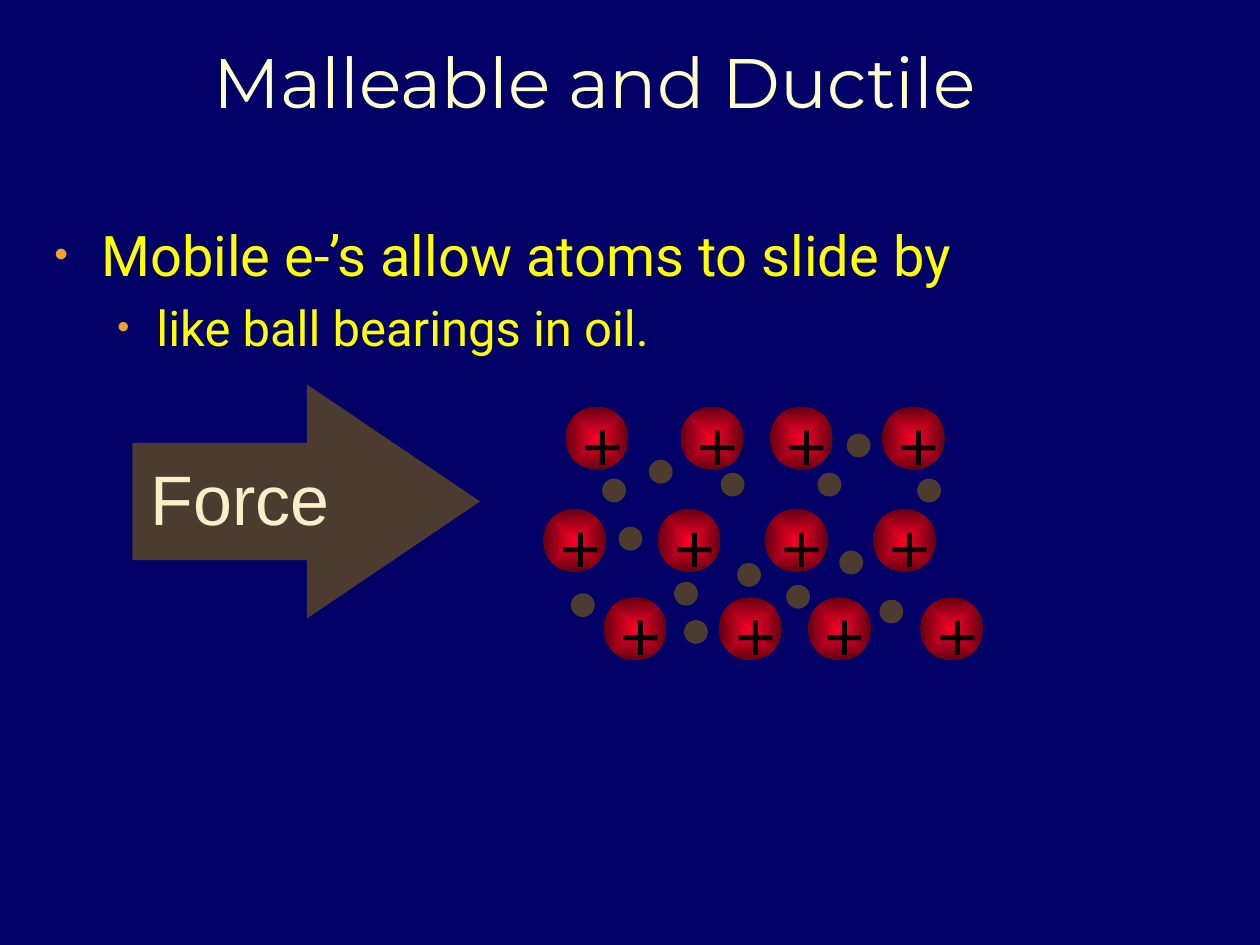
from lxml import etree
from pptx import Presentation
from pptx.dml.color import RGBColor
from pptx.enum.shapes import MSO_SHAPE
from pptx.enum.text import MSO_ANCHOR, MSO_AUTO_SIZE, PP_ALIGN
from pptx.oxml import parse_xml
from pptx.oxml.ns import nsdecls, qn
from pptx.util import Cm, Pt

OVAL, ARROW = MSO_SHAPE.OVAL, MSO_SHAPE.RIGHT_ARROW
TOP, BOTTOM = MSO_ANCHOR.TOP, MSO_ANCHOR.BOTTOM

NAVY = RGBColor(0x00, 0x00, 0x66)
CREAM = RGBColor(0xFF, 0xFF, 0xCC)
YELLOW = RGBColor(0xFF, 0xFF, 0x00)
ORANGE = RGBColor(0xF0, 0xA2, 0x2E)
RED = RGBColor(0xFC, 0x01, 0x28)
DARK_RED = RGBColor(0x65, 0x00, 0x10)
BROWN = RGBColor(0x4E, 0x3B, 0x30)
SAND = RGBColor(0xFB, 0xEE, 0xC9)
BLACK = RGBColor(0x00, 0x00, 0x00)

TITLE = "Malleable and Ductile"
# text, level, size (pt), left margin (cm), hanging indent (cm), space before (pt)
BULLETS = [
    ("Mobile e-’s allow atoms to slide by", 0, 32, 0.95, 0.95, 0),
    ("like ball bearings in oil.", 1, 28, 2.06, 0.79, 5.6),
]

# Positions in cm: the bottom row of ions repeats the top row, shifted right
TOP_ROW = [11.4, 13.72, 15.52, 17.78]
ION_ROWS = [
    (8.2, TOP_ROW),
    (10.26, [10.95, 13.26, 15.42, 17.6]),
    (12.04, [x + 0.77 for x in TOP_ROW]),
]
ELECTRONS = [
    (16.48, 9.53), (13.08, 9.27), (11.51, 11.96), (12.47, 10.62),
    (14.53, 9.53), (13.79, 12.5), (17.73, 12.09), (14.86, 11.35),
    (15.85, 11.79), (16.92, 11.1), (18.49, 9.65), (17.07, 8.74),
    (12.14, 9.65), (13.59, 11.73),
]
ION_SIZE, ELECTRON_SIZE = 1.27, 0.48


def place(sp, x, y, w, h):
    sp.left, sp.top, sp.width, sp.height = Cm(x), Cm(y), Cm(w), Cm(h)


def add_run(p, text, size, font, color):
    r = p.add_run()
    r.text = text
    r.font.size = Pt(size)
    r.font.name = font
    r.font.color.rgb = color


def add_bullet(p, left, hanging):
    pPr = p._p.get_or_add_pPr()
    pPr.set("marL", str(Cm(left)))
    pPr.set("indent", str(-Cm(hanging)))
    color = etree.SubElement(pPr, qn("a:buClr"))
    etree.SubElement(color, qn("a:srgbClr")).set("val", str(ORANGE))
    etree.SubElement(pPr, qn("a:buSzPct")).set("val", "70000")
    etree.SubElement(pPr, qn("a:buFont")).set("typeface", "Arial")
    etree.SubElement(pPr, qn("a:buChar")).set("char", "•")


def add_plain_shape(shapes, kind, x, y, w, h):
    sp = shapes.add_shape(kind, Cm(x), Cm(y), Cm(w), Cm(h))
    sp.shadow.inherit = False
    sp.line.fill.background()
    sp.fill.solid()
    sp.fill.fore_color.rgb = BROWN
    return sp


def add_label(shapes, text, x, y, w, h, color):
    tf = shapes.add_textbox(Cm(x), Cm(y), Cm(w), Cm(h)).text_frame
    tf.word_wrap = True
    tf.vertical_anchor = BOTTOM
    add_run(tf.paragraphs[0], text, 40, "Arial", color)


def fill_radial(sp, inner, outer):
    sp.fill.gradient()
    for stop, color in zip(sp.fill.gradient_stops, (inner, outer)):
        stop.color.rgb = color
    lin = sp._element.spPr.find(qn("a:gradFill")).find(qn("a:lin"))
    lin.getparent().replace(lin, parse_xml(
        f'<a:path {nsdecls("a")} path="shape">'
        '<a:fillToRect l="50000" t="50000" r="50000" b="50000"/></a:path>'))


def add_ion(slide, x, y):
    shapes = slide.shapes.add_group_shape().shapes
    ball = add_plain_shape(shapes, OVAL, x, y, ION_SIZE, ION_SIZE)
    fill_radial(ball, RED, DARK_RED)
    add_label(shapes, "+", x + 0.09, y - 0.25, 0.84, 1.96, BLACK)


def main():
    prs = Presentation()
    prs.slide_width, prs.slide_height = Cm(25.4), Cm(19.05)
    s = prs.slides.add_slide(prs.slide_layouts[1])
    s.background.fill.solid()
    s.background.fill.fore_color.rgb = NAVY

    title, body = s.placeholders
    place(title, 1.27, 0.41, 21.44, 2.18)
    tf = title.text_frame
    tf.auto_size = MSO_AUTO_SIZE.NONE
    tf.vertical_anchor = BOTTOM
    tf.paragraphs[0].alignment = PP_ALIGN.CENTER
    add_run(tf.paragraphs[0], TITLE, 40, "Montserrat", CREAM)

    place(body, 0.84, 4.32, 24.13, 12.57)
    tf = body.text_frame
    tf.auto_size = MSO_AUTO_SIZE.NONE
    tf.vertical_anchor = TOP
    for i, (text, level, size, left, hanging, before) in enumerate(BULLETS):
        p = tf.add_paragraph() if i else tf.paragraphs[0]
        p.level = level
        add_bullet(p, left, hanging)
        p.space_before = Pt(before)
        add_run(p, text, size, "Roboto", YELLOW)

    for y, row in ION_ROWS:
        for x in row:
            add_ion(s, x, y)
    for x, y in ELECTRONS:
        add_plain_shape(s.shapes, OVAL, x, y, ELECTRON_SIZE, ELECTRON_SIZE)

    arrow = add_plain_shape(s.shapes, ARROW, 2.67, 7.75, 7.01, 4.72)
    arrow.adjustments[0] = 0.5
    arrow.adjustments[1] = 0.74
    add_label(s.shapes, "Force", 2.79, 9.04, 5.05, 1.96, SAND)

    prs.save("out.pptx")


if __name__ == "__main__":
    main()
